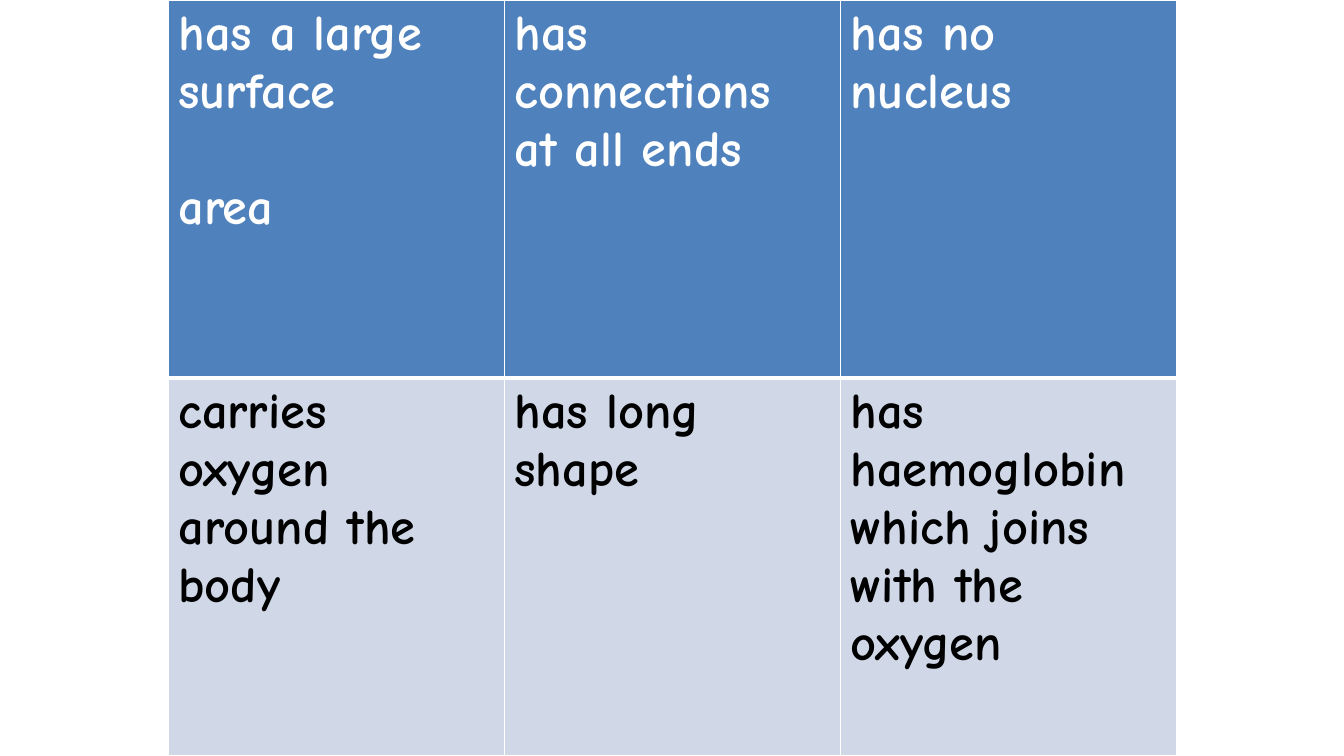
from lxml.etree import SubElement
from pptx import Presentation
from pptx.dml.color import RGBColor
from pptx.oxml.ns import qn
from pptx.util import Inches, Pt

FONT = "Comic Neue"
WHITE, BLACK = "FFFFFF", "000000"
HEADER_BLUE, BODY_BLUE = "4F81BD", "D0D8E8"
LINE_GAP = 41.4  # height of one line of text, in points

# Each cell is a list of paragraphs.
CELL_FEATURES = [
    [["has a large surface", "area"], ["has connections at all ends"], ["has no nucleus"]],
    [["carries oxygen around the body"], ["has long shape"],
     ["has haemoglobin which joins with the oxygen"]],
]


def color(hex_code):
    return RGBColor.from_string(hex_code)


def set_borders(cell, widths):
    """Draw white borders; widths maps the sides L, R, T, B to points."""
    properties = cell._tc.get_or_add_tcPr()
    for side, width in widths.items():
        line = SubElement(properties, qn(f"a:ln{side}"), w=str(Pt(width)))
        fill = SubElement(line, qn("a:solidFill"))
        SubElement(fill, qn("a:srgbClr"), val=WHITE)


def write_cell(cell, paragraphs, text_color):
    cell.text_frame.text = "\n".join(paragraphs)
    for index, para in enumerate(cell.text_frame.paragraphs):
        if index:
            para.space_before = Pt(LINE_GAP)
        for span in para.runs:
            span.font.name = FONT
            span.font.size = Pt(36)
            span.font.bold = True
            span.font.color.rgb = color(text_color)


def add_feature_table(page):
    rows, columns = len(CELL_FEATURES), len(CELL_FEATURES[0])
    width, height = Inches(10), Inches(7.5)
    table = page.shapes.add_table(rows, columns, Inches(1.67), 0, width, height).table
    for column in table.columns:
        column.width = width // columns
    for row_index, features in enumerate(CELL_FEATURES):
        is_header = row_index == 0
        table.rows[row_index].height = height // rows
        for column_index, paragraphs in enumerate(features):
            cell = table.cell(row_index, column_index)
            set_borders(cell, {"L": 1, "R": 1, "T": 1 if is_header else 3,
                               "B": 3 if is_header else 1})
            cell.fill.solid()
            cell.fill.fore_color.rgb = color(HEADER_BLUE if is_header else BODY_BLUE)
            write_cell(cell, paragraphs, WHITE if is_header else BLACK)


def main():
    deck = Presentation()
    deck.slide_width, deck.slide_height = Inches(13.33), Inches(7.5)
    page = deck.slides.add_slide(deck.slide_layouts[6])
    add_feature_table(page)
    deck.save("out.pptx")


if __name__ == "__main__":
    main()
